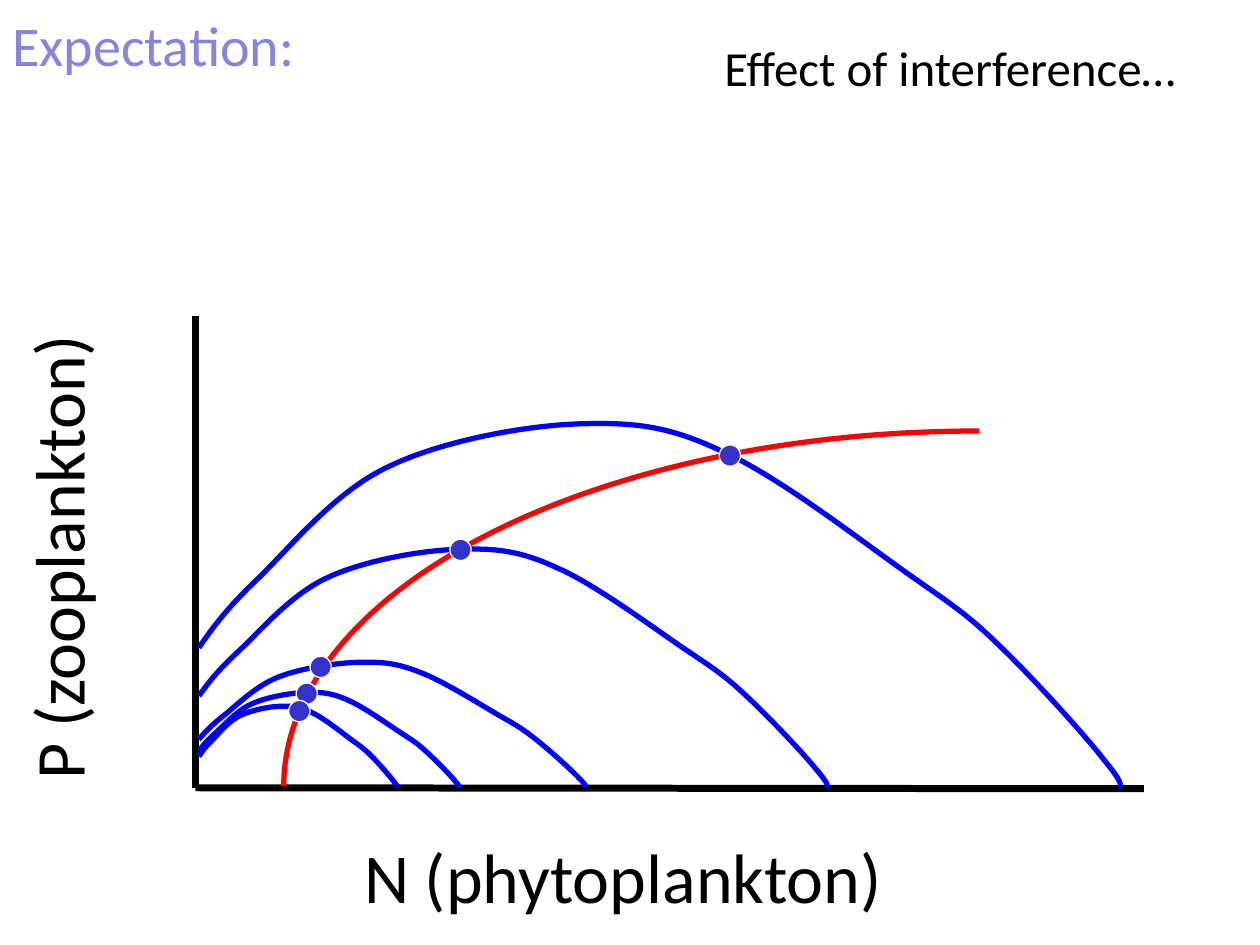
from dataclasses import dataclass

from lxml.etree import SubElement
from pptx import Presentation
from pptx.dml.color import RGBColor
from pptx.enum.shapes import MSO_CONNECTOR as Connector, MSO_SHAPE as Preset
from pptx.enum.text import MSO_AUTO_SIZE as AutoSize, PP_ALIGN as Align
from pptx.oxml.ns import qn
from pptx.util import Cm, Pt


@dataclass(frozen=True)
class Theme:
    font: str = "Calibri"
    heading: RGBColor = RGBColor(0x85, 0x85, 0xE0)
    ink: RGBColor = RGBColor(0, 0, 0)
    prey: RGBColor = RGBColor(0, 0, 0xFF)
    predator: RGBColor = RGBColor(0xFF, 0, 0)
    equilibrium: RGBColor = RGBColor(0x33, 0x33, 0xCC)
    halo: RGBColor = RGBColor(0xFF, 0xFF, 0xFF)
    heading_size: Pt = Pt(32)
    caption_size: Pt = Pt(28)
    axis_size: Pt = Pt(40)
    axis_weight: Pt = Pt(4)
    curve_weight: Pt = Pt(3)
    halo_weight: Pt = Pt(0.75)


THEME = Theme()

ORIGIN_X, ORIGIN_Y = 3.94, 15.88
AXIS_TOP = 6.38
AXIS_END = (23.06, 15.9)
CURVE_LEFT = 4.01
DOT_SIZE = 0.43

HUMP = [
    (0, 617),
    (15, 562), (30, 510), (64, 428),
    (98, 345), (147, 190), (206, 121),
    (263, 52), (351, 10), (411, 5),
    (472, 0), (509, 10), (569, 83),
    (630, 152), (724, 338), (775, 428),
    (824, 514), (835, 534), (869, 617),
    (903, 700), (959, 855), (980, 924),
    (1000, 986), (999, 993), (996, 1000),
]
PREY_EXTENTS = [(4.01, 1.65), (5.26, 1.93), (7.82, 2.54), (12.7, 4.83), (18.62, 7.37)]
EQUILIBRIA = [(14.5, 8.97), (9.07, 10.87), (5.97, 13.77), (5.82, 14.12), (6.25, 13.23)]


def add_label(shapes, text, box, size, color=THEME.ink, align=Align.LEFT, wrap=True):
    label = shapes.add_textbox(*map(Cm, box))
    frame = label.text_frame
    frame.word_wrap = wrap
    frame.auto_size = AutoSize.SHAPE_TO_FIT_TEXT
    paragraph = frame.paragraphs[0]
    paragraph.text = text
    paragraph.alignment = align
    paragraph.font.name = THEME.font
    paragraph.font.size = size
    paragraph.font.color.rgb = color
    return label


def add_axis_label(shapes, text, box, rotation=0):
    label = add_label(shapes, text, box, THEME.axis_size, wrap=False)
    label.text_frame.paragraphs[0].line_spacing = 1.15
    label.rotation = rotation


def add_axis(shapes, end):
    axis = shapes.add_connector(
        Connector.STRAIGHT, Cm(ORIGIN_X), Cm(ORIGIN_Y), *map(Cm, end)
    )
    axis.line.color.rgb = THEME.ink
    axis.line.width = THEME.axis_weight
    SubElement(axis._element.spPr, qn("a:effectLst"))


def style_curve(curve, color):
    curve.shadow.inherit = False
    curve.fill.background()
    curve.line.color.rgb = color
    curve.line.width = THEME.curve_weight


def bend_segments(curve):
    segments = list(curve._element.iter(qn("a:lnTo")))
    for controls in zip(segments[::3], segments[1::3], segments[2::3]):
        bezier = SubElement(controls[0].getparent(), qn("a:cubicBezTo"))
        for segment in controls:
            bezier.append(segment[0])
            segment.getparent().remove(segment)


def add_prey_isocline(shapes, width, height):
    scale = (Cm(width) / 1000, Cm(height) / 1000)
    builder = shapes.build_freeform(*HUMP[0], scale=scale)
    builder.add_line_segments(HUMP[1:], close=False)
    curve = builder.convert_to_shape(Cm(CURVE_LEFT), Cm(ORIGIN_Y - height))
    bend_segments(curve)
    style_curve(curve, THEME.prey)


def add_predator_isocline(shapes):
    curve = shapes.add_shape(Preset.ARC, Cm(5.72), Cm(8.69), Cm(27.94), Cm(14.33))
    curve.adjustments[0] = 161.74
    curve.adjustments[1] = 0
    curve._element.spPr.xfrm.set("flipH", "1")
    style_curve(curve, THEME.predator)


def add_equilibrium(shapes, left, top):
    dot = shapes.add_shape(Preset.OVAL, Cm(left), Cm(top), Cm(DOT_SIZE), Cm(DOT_SIZE))
    dot.shadow.inherit = False
    dot.fill.solid()
    dot.fill.fore_color.rgb = THEME.equilibrium
    dot.line.color.rgb = THEME.halo
    dot.line.width = THEME.halo_weight


def add_axes(shapes):
    axes = shapes.add_group_shape().shapes
    add_axis(axes, (ORIGIN_X, AXIS_TOP))
    add_axis(axes, AXIS_END)
    add_axis_label(axes, "N (phytoplankton)", (7.09, 16.43, 11.96, 2.18))
    add_axis_label(axes, "P (zooplankton)", (-4.22, 9.65, 10.46, 2.18), rotation=270)


def main():
    deck = Presentation()
    deck.slide_width, deck.slide_height = Cm(25.4), Cm(19.05)
    shapes = deck.slides.add_slide(deck.slide_layouts[6]).shapes

    add_label(shapes, "Expectation:", (0, 0.08, 8.26, 1.63),
              THEME.heading_size, THEME.heading)
    add_label(shapes, "Effect of interference…", (12.9, 0.64, 12.5, 1.45),
              THEME.caption_size, align=Align.CENTER)
    add_axes(shapes)
    for width, height in PREY_EXTENTS:
        add_prey_isocline(shapes, width, height)
    add_predator_isocline(shapes)
    for left, top in EQUILIBRIA:
        add_equilibrium(shapes, left, top)

    deck.save("out.pptx")


if __name__ == "__main__":
    main()
